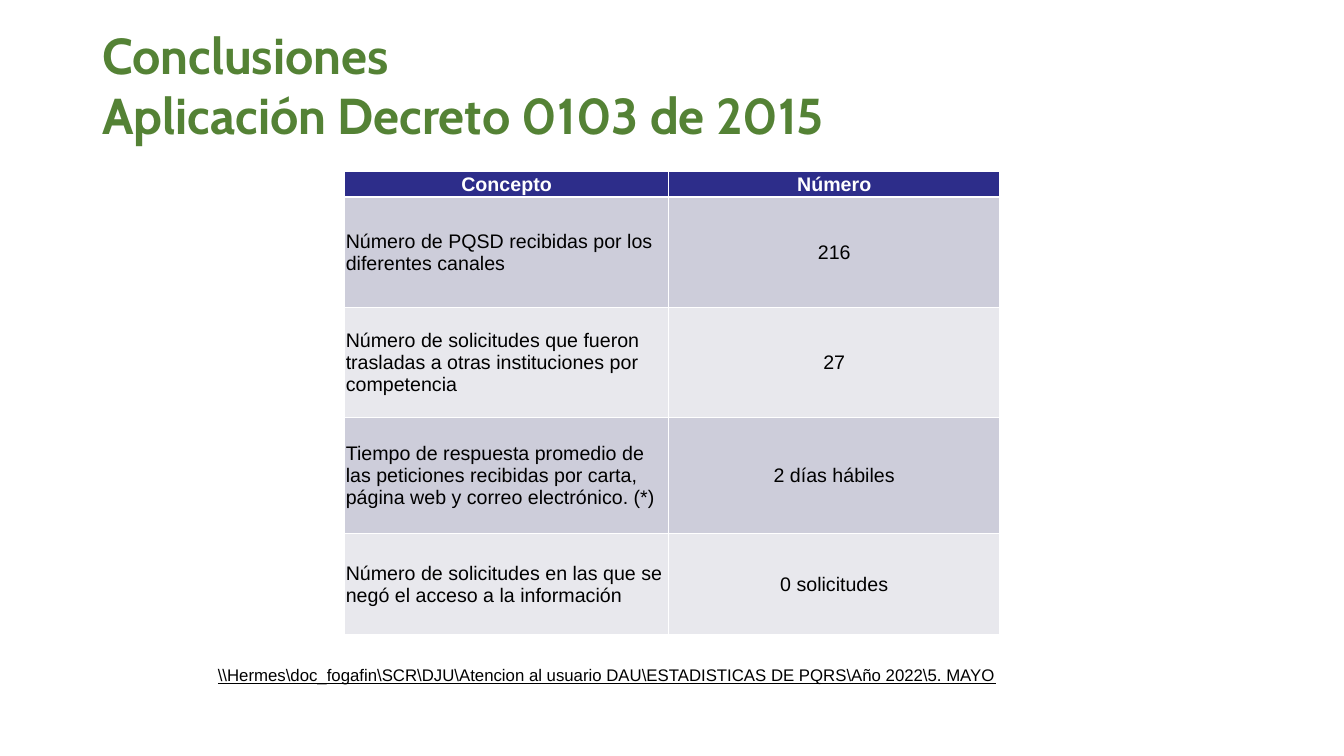
from dataclasses import dataclass

from lxml import etree
from pptx import Presentation
from pptx import util as u
from pptx.dml.color import RGBColor
from pptx.enum import text
from pptx.oxml import ns

Pt = u.Pt


@dataclass(frozen=True)
class Theme:
    """Colours, fonts and type sizes of the slide."""
    title_font: str = "Cabin"
    body_font: str = "Arial"
    title_size: int = 36
    table_size: int = 14
    source_size: int = 12
    green: str = "548235"
    navy: str = "2D2D8A"
    bands: tuple = ("CDCDDA", "E8E8ED")
    white: str = "FFFFFF"
    black: str = "000000"


THEME = Theme()
COL_WIDTHS = (231.2, 236.8)
ROW_HEIGHTS = (18.4, 78.5, 78.5, 83, 72)
ROWS = (
    ("Concepto", "Número"),
    ("Número de PQSD recibidas por los diferentes canales", "216"),
    ("Número de solicitudes que fueron trasladas a otras instituciones por competencia", "27"),
    ("Tiempo de respuesta promedio de las peticiones recibidas por carta, "
     "página web y correo electrónico. (*)", "2 días hábiles"),
    ("Número de solicitudes en las que se negó el acceso a la información", "0 solicitudes"),
)
SOURCE = r"\\Hermes\doc_fogafin\SCR\DJU\Atencion al usuario DAU\ESTADISTICAS DE PQRS\Año 2022\5. MAYO"


def add_run(p, words, font, size, color, bold=False, underline=False):
    """Append one formatted run to a paragraph."""
    r = p.add_run()
    r.text = words
    r.font.name, r.font.size = font, Pt(size)
    r.font.bold, r.font.underline = bold, underline
    r.font.color.rgb = RGBColor.from_string(color)


def add_text_box(s, box, anchor):
    """Add a wrapping text box and return its text frame."""
    tf = s.shapes.add_textbox(*map(Pt, box)).text_frame
    tf.word_wrap = True
    tf.vertical_anchor = anchor
    return tf


def add_title(s, box):
    """Add the two-line title."""
    p = add_text_box(s, box, text.MSO_ANCHOR.MIDDLE).paragraphs[0]
    for i, line in enumerate(("Conclusiones", "Aplicación Decreto 0103 de 2015")):
        if i:
            p.add_line_break()
        add_run(p, line, THEME.title_font, THEME.title_size, THEME.green, bold=True)


def set_borders(cell, widths):
    """Draw white borders in the widths given for each side."""
    tc_pr = cell._tc.get_or_add_tcPr()
    for side, width in widths.items():
        ln = etree.SubElement(tc_pr, ns.qn(f"a:ln{side}"), w=str(Pt(width)))
        fill = etree.SubElement(ln, ns.qn("a:solidFill"))
        etree.SubElement(fill, ns.qn("a:srgbClr"), val=THEME.white)


def fill_cell(cell, words, row, col):
    """Format one cell by its row and column."""
    header = row == 0
    set_borders(cell, {"L": 1, "R": 1, "T": 1.5 if row == 1 else 1, "B": 1.5 if header else 1})
    cell.fill.solid()
    cell.fill.fore_color.rgb = RGBColor.from_string(
        THEME.navy if header else THEME.bands[(row - 1) % 2])
    cell.margin_left = cell.margin_right = cell.margin_top = Pt(0.7)
    cell.margin_bottom = 0
    cell.vertical_anchor = text.MSO_ANCHOR.MIDDLE
    p = cell.text_frame.paragraphs[0]
    p.alignment = text.PP_ALIGN.CENTER if header or col else text.PP_ALIGN.LEFT
    add_run(p, words, THEME.body_font, THEME.table_size,
            THEME.white if header else THEME.black, bold=header)


def add_figures_table(s, box):
    """Add the table of requests and their figures."""
    table = s.shapes.add_table(len(ROWS), len(COL_WIDTHS), *map(Pt, box)).table
    for column, width in zip(table.columns, COL_WIDTHS):
        column.width = Pt(width)
    for i, (height, values) in enumerate(zip(ROW_HEIGHTS, ROWS)):
        table.rows[i].height = Pt(height)
        for j, words in enumerate(values):
            fill_cell(table.cell(i, j), words, i, j)


def add_source(s, box):
    """Add the underlined source path."""
    tf = add_text_box(s, box, text.MSO_ANCHOR.TOP)
    tf.auto_size = text.MSO_AUTO_SIZE.SHAPE_TO_FIT_TEXT
    p = tf.paragraphs[0]
    p.alignment = text.PP_ALIGN.JUSTIFY
    add_run(p, SOURCE, THEME.body_font, THEME.source_size, THEME.black, underline=True)


def main():
    """Build and save the slide."""
    prs = Presentation()
    prs.slide_width, prs.slide_height = Pt(960), Pt(540)
    s = prs.slides.add_slide(prs.slide_layouts[6])
    add_title(s, (66, 8, 828, 104.4))
    add_source(s, (148.5, 471.6, 687, 21.8))
    add_figures_table(s, (246.3, 122.6, sum(COL_WIDTHS), sum(ROW_HEIGHTS)))
    prs.save("out.pptx")


if __name__ == "__main__":
    main()
